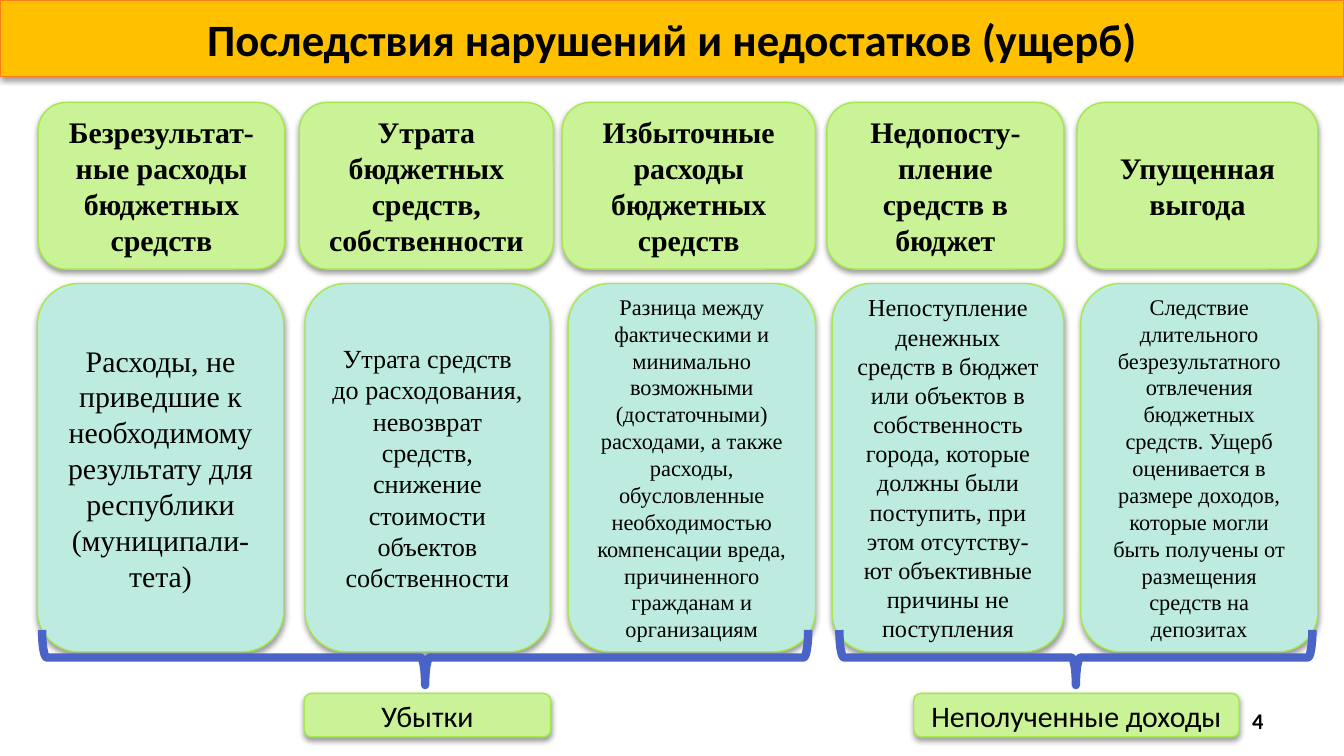
from lxml import etree
from pptx import Presentation
from pptx.dml.color import RGBColor
from pptx.enum.shapes import MSO_SHAPE as Preset
from pptx.enum.text import MSO_ANCHOR as Anchor, PP_ALIGN as Align
from pptx.oxml.ns import qn
from pptx.util import Pt

BLACK = RGBColor(0x00, 0x00, 0x00)
GREEN = RGBColor(0xCA, 0xF2, 0x97)
GREEN_EDGE = RGBColor(0xA4, 0xE9, 0x4C)
TEAL = RGBColor(0xBE, 0xEB, 0xDF)
AMBER = RGBColor(0xFF, 0xC0, 0x00)
ORANGE = RGBColor(0xFF, 0x7C, 0x1B)
BLUE = RGBColor(0x49, 0x63, 0xC7)
SERIF = "Times New Roman"
SANS = "Calibri"

HEADER_TOP, HEADER_HEIGHT = 54.9, 89.3
BODY_TOP, BODY_HEIGHT = 151.9, 197.3
LABEL_TOP, LABEL_HEIGHT = 371.5, 23.3
BRACE_TOP, BRACE_HEIGHT = 337.5, 29.5

HEADERS = [
    (20.5, 132, "Безрезультат-ные расходы бюджетных средств"),
    (160.3, 136.2, "Утрата бюджетных средств, собственности"),
    (301.2, 135.6, "Избыточные расходы бюджетных средств"),
    (443, 127, "Недопосту-пление средств в бюджет"),
    (577, 129, "Упущенная выгода"),
]
BODIES = [
    (20, 132, 16, "Расходы, не приведшие к необходимому результату для "
                  "республики (муниципали-тета)"),
    (163.4, 131.3, 14, "Утрата средств до расходования, невозврат средств, "
                       "снижение стоимости объектов собственности"),
    (304.4, 132.5, 12, "Разница между фактическими и минимально возможными "
                       "(достаточными) расходами, а также расходы, обусловленные "
                       "необходимостью компенсации вреда, причиненного гражданам "
                       "и организациям"),
    (445.8, 124, 13, "Непоступление денежных средств в бюджет или объектов в "
                     "собственность города, которые должны были поступить, при "
                     "этом отсутству-ют объективные причины не поступления"),
    (579, 127, 12, "Следствие длительного безрезультатного отвлечения бюджетных "
                   "средств. Ущерб оценивается в размере доходов, которые могли "
                   "быть получены от размещения средств на депозитах"),
]
LABELS = [(163, 132, "Убытки"), (489.5, 174.3, "Неполученные доходы")]
BRACES = [(22.6, 410.4), (449.7, 253.4)]


def write(shape, text, size, font, bold=False, align=Align.CENTER):
    frame = shape.text_frame
    frame.text = text
    frame.word_wrap = True
    frame.vertical_anchor = Anchor.MIDDLE
    para = frame.paragraphs[0]
    para.alignment = align
    for span in para.runs:
        span.font.size = Pt(size)
        span.font.name = font
        span.font.bold = bold
        span.font.color.rgb = BLACK


def paint(shape, fill, edge):
    shape.fill.solid()
    shape.fill.fore_color.rgb = fill
    shape.line.color.rgb = edge
    shape.line.width = Pt(0.75)
    shape.shadow.inherit = False
    effects = shape.element.spPr.find(qn("a:effectLst"))
    shadow = etree.SubElement(
        effects, qn("a:outerShdw"), blurRad=str(Pt(3.1)), dist=str(Pt(1.6)),
        dir="5400000", rotWithShape="0")
    color = etree.SubElement(shadow, qn("a:srgbClr"), val=str(BLACK))
    etree.SubElement(color, qn("a:alpha"), val="38000")


def add_card(page, left, top, width, height, fill, text, size, font, bold=False):
    card = page.shapes.add_shape(
        Preset.ROUNDED_RECTANGLE, Pt(left), Pt(top), Pt(width), Pt(height))
    paint(card, fill, GREEN_EDGE)
    write(card, text, size, font, bold)


def add_brace(page, left, width):
    shift = (width - BRACE_HEIGHT) / 2
    brace = page.shapes.add_shape(
        Preset.LEFT_BRACE, Pt(left + shift), Pt(BRACE_TOP - shift),
        Pt(BRACE_HEIGHT), Pt(width))
    brace.rotation = 270
    brace.fill.background()
    brace.line.color.rgb = BLUE
    brace.line.width = Pt(4.5)
    brace.shadow.inherit = False


def set_title(page, text):
    title = page.shapes.title
    title.left, title.top, title.width, title.height = Pt(0), Pt(0), Pt(720), Pt(41)
    paint(title, AMBER, ORANGE)
    write(title, text, 24, SANS, bold=True)


def add_page_number(page, text):
    box = page.shapes.add_textbox(Pt(658), Pt(375), Pt(26), Pt(22))
    write(box, text, 12, SANS, bold=True, align=Align.RIGHT)


def main():
    deck = Presentation()
    deck.slide_width, deck.slide_height = Pt(720), Pt(405)
    page = deck.slides.add_slide(deck.slide_layouts[5])
    set_title(page, "Последствия нарушений и недостатков (ущерб)")
    for left, width, text in HEADERS:
        add_card(page, left, HEADER_TOP, width, HEADER_HEIGHT, GREEN, text, 16, SERIF, True)
    for left, width, size, text in BODIES:
        add_card(page, left, BODY_TOP, width, BODY_HEIGHT, TEAL, text, size, SERIF)
    for left, width, text in LABELS:
        add_card(page, left, LABEL_TOP, width, LABEL_HEIGHT, GREEN, text, 16, SANS)
    for left, width in BRACES:
        add_brace(page, left, width)
    add_page_number(page, "4")
    deck.save("out.pptx")


if __name__ == "__main__":
    main()
